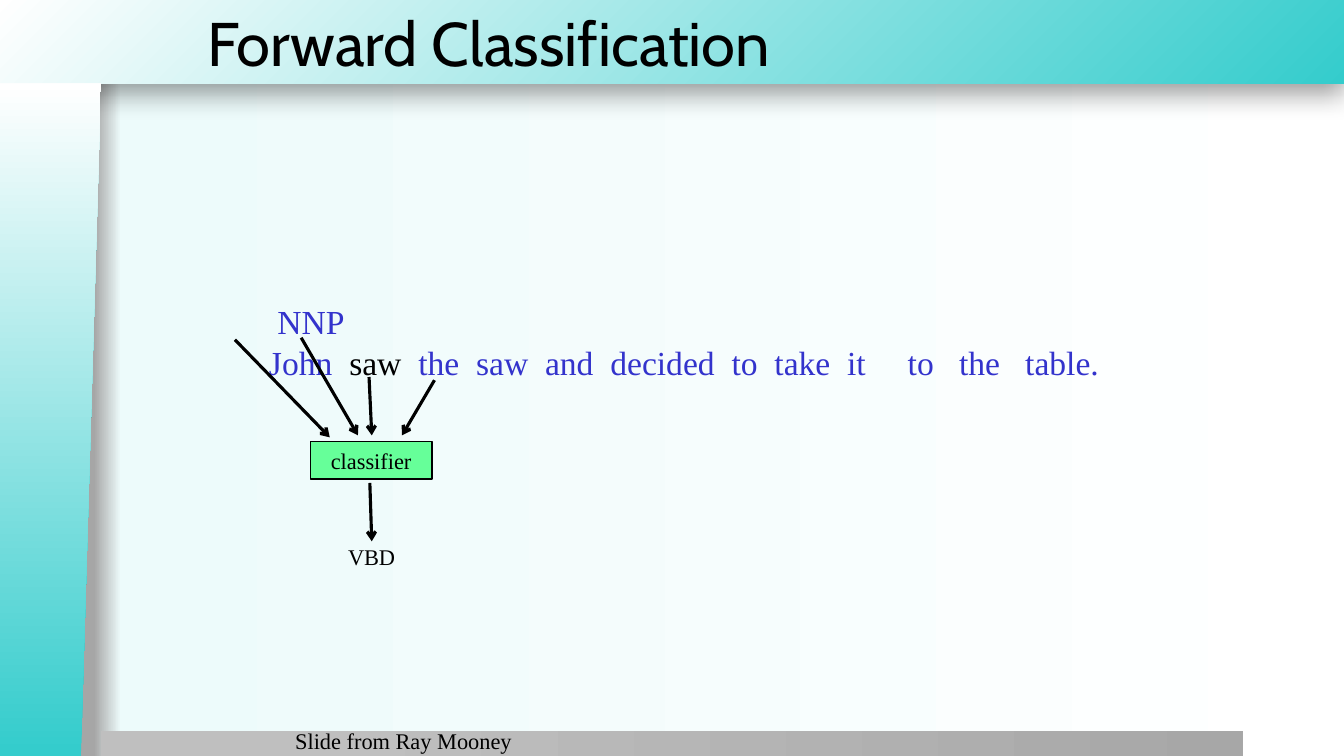
from lxml import etree
from pptx import Presentation
from pptx.dml.color import RGBColor
from pptx.enum.shapes import MSO_CONNECTOR, MSO_SHAPE
from pptx.enum.text import MSO_ANCHOR, MSO_AUTO_SIZE, PP_ALIGN
from pptx.oxml import parse_xml
from pptx.oxml.ns import nsdecls, qn
from pptx.util import Cm, Pt

RECTANGLE = MSO_SHAPE.RECTANGLE
MANUAL_INPUT = MSO_SHAPE.FLOWCHART_MANUAL_INPUT
STRAIGHT = MSO_CONNECTOR.STRAIGHT
TOP, MIDDLE = MSO_ANCHOR.TOP, MSO_ANCHOR.MIDDLE
LEFT, CENTER = PP_ALIGN.LEFT, PP_ALIGN.CENTER
GROW = MSO_AUTO_SIZE.SHAPE_TO_FIT_TEXT

BLACK = RGBColor(0x00, 0x00, 0x00)
WHITE = RGBColor(0xFF, 0xFF, 0xFF)
BLUE = RGBColor(0x33, 0x33, 0xCC)
GREEN = RGBColor(0x66, 0xFF, 0x99)
TEAL = RGBColor(0x34, 0xCC, 0xCC)
PALE_TEAL = RGBColor(0xED, 0xFB, 0xFB)
SILVER = RGBColor(0xBF, 0xBF, 0xBF)
GRAY = RGBColor(0xA7, 0xA7, 0xA7)
EDGE_GRAY = RGBColor(0xA6, 0xA6, 0xA6)

LINEAR = '<a:lin ang="0" scaled="0"/>'
FROM_CORNER = '<a:path path="circle"><a:fillToRect l="100000" t="100000"/></a:path>'


def paint_gradient(fill, holder, stops, direction=LINEAR):
    """Fill with (percent, colour) stops; holder is the XML element around the fill."""
    fill.background()
    empty_fill = next(holder.iter(qn("a:noFill")))
    stop_xml = "".join(
        f'<a:gs pos="{percent * 1000}"><a:srgbClr val="{color}"/></a:gs>'
        for percent, color in stops)
    gradient = parse_xml(
        f'<a:gradFill {nsdecls("a")} rotWithShape="1">'
        f'<a:gsLst>{stop_xml}</a:gsLst>{direction}</a:gradFill>')
    empty_fill.getparent().replace(empty_fill, gradient)


def write_text(shape, *lines, size=16, font="Times New Roman", align=LEFT,
               anchor=TOP, wrap=True, grow=False):
    """Write each line as a paragraph of (text, colour) runs."""
    frame = shape.text_frame
    frame.word_wrap = wrap
    frame.vertical_anchor = anchor
    if grow:
        frame.auto_size = GROW
    for index, line in enumerate(lines):
        paragraph = frame.add_paragraph() if index else frame.paragraphs[0]
        paragraph.alignment = align
        for words, color in line:
            run = paragraph.add_run()
            run.text = words
            run.font.size = Pt(size)
            run.font.name = font
            run.font.color.rgb = color


prs = Presentation()
prs.slide_width, prs.slide_height = Cm(33.87), Cm(19.05)
slide = prs.slides.add_slide(prs.slide_layouts[6])
shapes = slide.shapes

# Background and frame
paint_gradient(slide.background.fill, slide.element,
               [(7, EDGE_GRAY), (9, PALE_TEAL), (100, WHITE)])

header = shapes.add_shape(RECTANGLE, Cm(-0.02), Cm(0), Cm(33.89), Cm(2.11))
footer = shapes.add_shape(RECTANGLE, Cm(2.54), Cm(18.42), Cm(28.78), Cm(0.66))
sidebar = shapes.add_shape(MANUAL_INPUT, Cm(-7.21), Cm(9.32), Cm(16.97), Cm(2.54))
sidebar.rotation = 270
sidebar.element.spPr.xfrm.set("flipV", "1")

for band, stops, direction in (
    (header, [(0, TEAL), (100, WHITE)], FROM_CORNER),
    (footer, [(20, SILVER), (100, GRAY)], LINEAR),
    (sidebar, [(1, TEAL), (100, WHITE)], LINEAR),
):
    paint_gradient(band.fill, band.element.spPr, stops, direction)
    band.line.fill.background()
    band.shadow.inherit = False

header_effects = header.element.spPr.find(qn("a:effectLst"))
header_effects.append(parse_xml(
    f'<a:outerShdw {nsdecls("a")} blurRad="{Pt(20)}" dist="{Pt(6)}" dir="5400000" '
    f'algn="t" rotWithShape="0"><a:srgbClr val="{BLACK}"><a:alpha val="40000"/>'
    '</a:srgbClr></a:outerShdw>'))

title = shapes.add_textbox(Cm(4.98), Cm(0), Cm(28.9), Cm(2.11))
write_text(title, [("Forward Classification", BLACK)],
           size=44, font="Cabin", anchor=MIDDLE)

# Tagged sentence and classifier
sentence = shapes.add_textbox(Cm(6.53), Cm(7.47), Cm(21.62), Cm(2.31))
write_text(sentence,
           [(" NNP", BLUE)],
           [("John  ", BLUE), ("saw ", BLACK),
            (" the  saw  and  decided  to  take  it     to   the   table.", BLUE)],
           size=24, wrap=False, grow=True)

classifier = shapes.add_shape(RECTANGLE, Cm(7.82), Cm(11.13), Cm(3.07), Cm(0.94))
classifier.fill.solid()
classifier.fill.fore_color.rgb = GREEN
classifier.line.color.rgb = BLACK
classifier.line.width = Pt(1)
classifier.shadow.inherit = False
write_text(classifier, [("classifier", BLACK)], align=CENTER, anchor=MIDDLE, grow=True)

predicted_tag = shapes.add_textbox(Cm(8.31), Cm(13.56), Cm(2.11), Cm(0.94))
write_text(predicted_tag, [("VBD", BLACK)], align=CENTER, grow=True)

# Features into the classifier, then its output
for start_x, start_y, end_x, end_y in (
    (5.92, 8.56, 8.31, 11.02),
    (7.59, 8.51, 9.02, 10.97),
    (9.3, 9.5, 9.37, 10.97),
    (10.95, 9.58, 10.13, 10.97),
    (9.32, 12.17, 9.37, 13.64),
):
    arrow = shapes.add_connector(STRAIGHT, Cm(start_x), Cm(start_y), Cm(end_x), Cm(end_y))
    arrow.line.color.rgb = BLACK
    arrow.line.width = Pt(2.25)
    etree.SubElement(arrow.line._get_or_add_ln(), qn("a:tailEnd"), type="arrow")
    etree.SubElement(arrow.element.spPr, qn("a:effectLst"))

credit = shapes.add_textbox(Cm(7.19), Cm(18.21), Cm(8.69), Cm(0.64))
write_text(credit, [("Slide from Ray Mooney", BLACK)])

prs.save("out.pptx")
